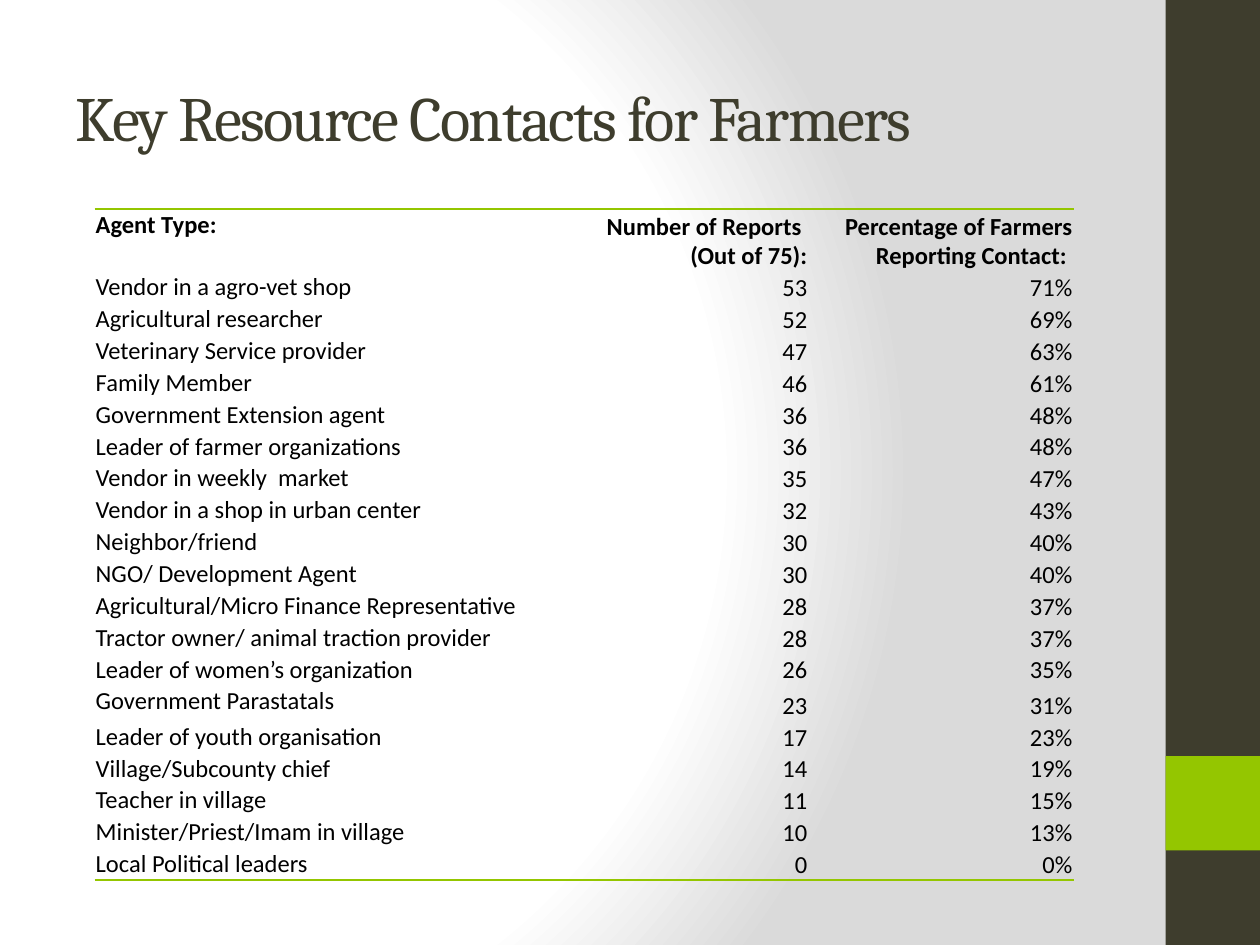
from pptx import Presentation
from pptx.dml.color import RGBColor
from pptx.enum.shapes import MSO_SHAPE
from pptx.enum.text import MSO_ANCHOR, MSO_AUTO_SIZE, PP_ALIGN
from pptx.oxml import parse_xml
from pptx.oxml.ns import nsdecls
from pptx.util import Pt

TITLE = "Key Resource Contacts for Farmers"
HEAD = (
    "Agent Type:",
    "Number of Reports \n(Out of 75):",
    "Percentage of Farmers Reporting Contact: ",
)
TOTAL = 75
AGENTS = [
    ("Vendor in a agro-vet shop", 53),
    ("Agricultural researcher", 52),
    ("Veterinary Service provider", 47),
    ("Family Member", 46),
    ("Government Extension agent", 36),
    ("Leader of farmer organizations", 36),
    ("Vendor in weekly  market", 35),
    ("Vendor in a shop in urban center", 32),
    ("Neighbor/friend", 30),
    ("NGO/ Development Agent", 30),
    ("Agricultural/Micro Finance Representative", 28),
    ("Tractor owner/ animal traction provider", 28),
    ("Leader of women’s organization", 26),
    ("Government Parastatals", 23),
    ("Leader of youth organisation", 17),
    ("Village/Subcounty chief", 14),
    ("Teacher in village", 11),
    ("Minister/Priest/Imam in village", 10),
    ("Local Political leaders", 0),
]
TALL = "Government Parastatals"

DARK = RGBColor(0x3E, 0x3D, 0x2D)
GREEN = RGBColor(0x94, 0xC6, 0x00)
BLACK = RGBColor(0, 0, 0)
STOPS = [(0, "FFFFFF"), (75, "FFFFFF"), (100, "DADADA")]

COLS = (258, 150, 151.5)
HEAD_H, ROW_H, TALL_H = 35.6, 18.2, 20.2
BARS = [(0, 540, DARK), (432, 54, GREEN)]
NO_GRID = "{2D5ABB26-0587-4C30-8999-92F81FD0307C}"


def paint_back(slide):
    stops = "".join(
        f'<a:gs pos="{pos * 1000}"><a:srgbClr val="{tint}"/></a:gs>'
        for pos, tint in STOPS
    )
    slide.element.cSld.insert(0, parse_xml(
        f'<p:bg {nsdecls("p", "a")}><p:bgPr><a:gradFill rotWithShape="1">'
        f'<a:gsLst>{stops}</a:gsLst><a:path path="circle">'
        '<a:fillToRect l="20000" t="50000" r="100000" b="50000"/>'
        '</a:path></a:gradFill><a:effectLst/></p:bgPr></p:bg>'
    ))


def add_bar(slide, top, height, color):
    bar = slide.shapes.add_shape(
        MSO_SHAPE.RECTANGLE, Pt(666), Pt(top), Pt(54), Pt(height))
    bar.shadow.inherit = False
    bar.fill.solid()
    bar.fill.fore_color.rgb = color
    bar.line.fill.background()


def set_title(slide):
    title = slide.shapes.title
    title.left, title.top = Pt(36), Pt(21.6)
    title.width, title.height = Pt(600), Pt(90)
    frame = title.text_frame
    frame.text = TITLE
    frame.auto_size = MSO_AUTO_SIZE.NONE
    frame.vertical_anchor = MSO_ANCHOR.MIDDLE
    para = frame.paragraphs[0]
    para.alignment = PP_ALIGN.LEFT
    run = para.runs[0]
    run.font.name, run.font.size = "Cambria", Pt(36)
    run.font.color.rgb = DARK
    run.font._element.set("spc", "-100")


def add_rule(cell, side):
    """Draw a green border on one side of a cell: T or B."""
    cell._tc.get_or_add_tcPr().insert(0, parse_xml(
        f'<a:ln{side} {nsdecls("a")} w="12700"><a:solidFill>'
        f'<a:srgbClr val="{GREEN}"/></a:solidFill></a:ln{side}>'
    ))


def fill_cell(cell, text, bold, first):
    cell.text = text
    cell.fill.background()
    cell.margin_left = cell.margin_right = cell.margin_top = Pt(0.7)
    cell.margin_bottom = Pt(0)
    cell.vertical_anchor = MSO_ANCHOR.TOP if first else MSO_ANCHOR.BOTTOM
    for para in cell.text_frame.paragraphs:
        para.alignment = PP_ALIGN.LEFT if first else PP_ALIGN.RIGHT
        for run in para.runs:
            run.font.name, run.font.size = "Calibri", Pt(14)
            run.font.bold = bold
            run.font.color.rgb = BLACK


def add_grid(slide):
    rows = [HEAD] + [(name, str(n), f"{n / TOTAL:.0%}") for name, n in AGENTS]
    tall = [HEAD_H] + [TALL_H if name == TALL else ROW_H for name, _ in AGENTS]
    table = slide.shapes.add_table(
        len(rows), len(COLS), Pt(54), Pt(119.5), Pt(sum(COLS)), Pt(sum(tall))
    ).table
    table.first_row = table.horz_banding = False
    table._tbl.tblPr[0].text = NO_GRID
    for col, width in zip(table.columns, COLS):
        col.width = Pt(width)
    for r, (row, height) in enumerate(zip(rows, tall)):
        table.rows[r].height = Pt(height)
        for c, text in enumerate(row):
            fill_cell(table.cell(r, c), text, r == 0, c == 0)
    for c in range(len(COLS)):
        add_rule(table.cell(0, c), "T")
        add_rule(table.cell(len(rows) - 1, c), "B")


def main():
    deck = Presentation()
    deck.slide_width, deck.slide_height = Pt(720), Pt(540)
    slide = deck.slides.add_slide(deck.slide_layouts[5])
    paint_back(slide)
    for bar in BARS:
        add_bar(slide, *bar)
    set_title(slide)
    add_grid(slide)
    deck.save("out.pptx")


if __name__ == "__main__":
    main()
